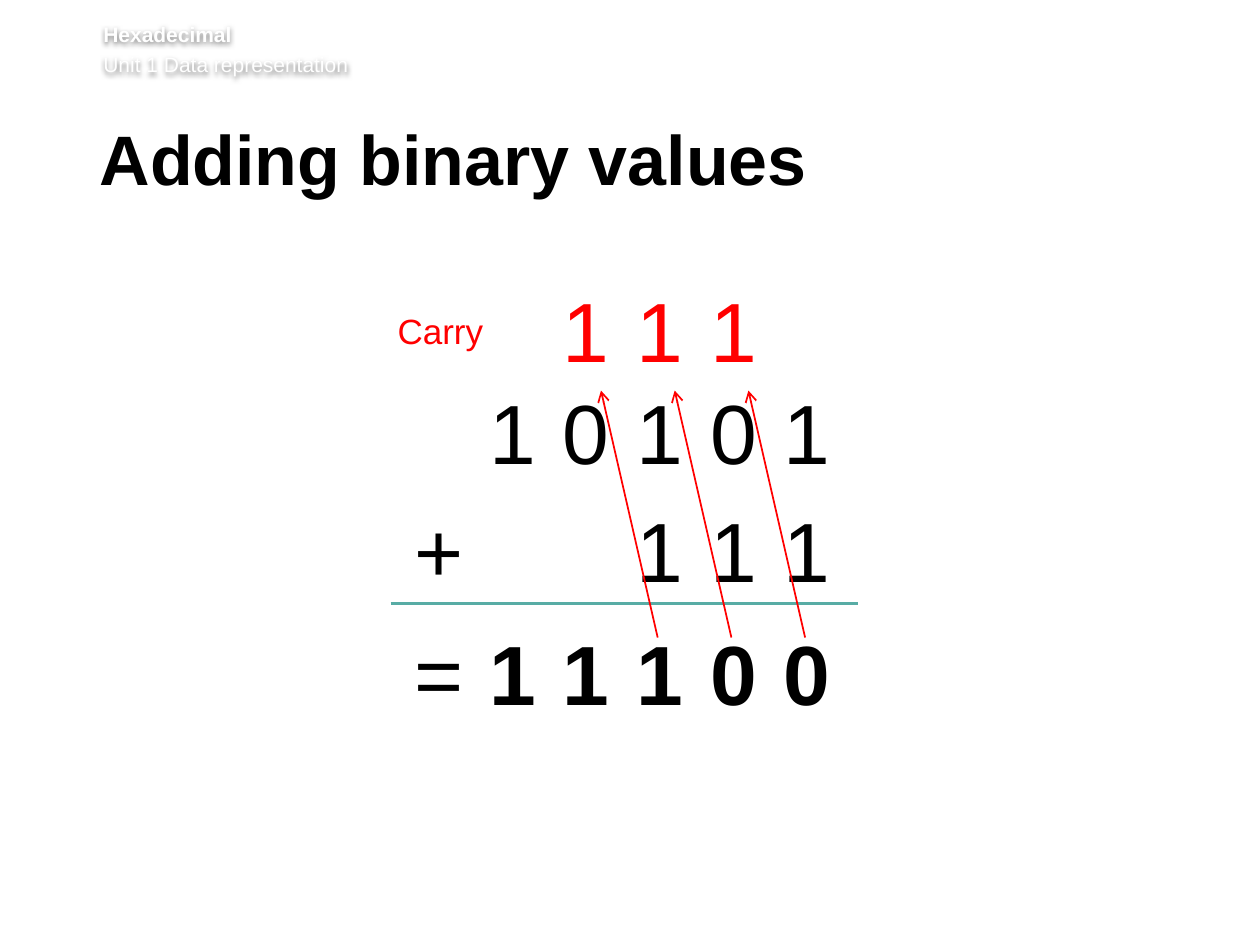
"""Build a slide that adds two binary values column by column."""
from lxml import etree
from pptx import Presentation
from pptx import util as u
from pptx.dml.color import RGBColor
from pptx.enum import shapes, text
from pptx.oxml import parse_xml
from pptx.oxml.ns import nsdecls, qn

BLACK = RGBColor(0x00, 0x00, 0x00)
WHITE = RGBColor(0xFF, 0xFF, 0xFF)
RED = RGBColor(0xFF, 0x00, 0x00)
TEAL = RGBColor(0x58, 0xAC, 0xA5)

HEADER = [("Hexadecimal", True), ("Unit 1 Data representation", False)]
TITLE = "Adding binary values"
CARRY_LABEL = "Carry"
ROWS = [
    {"top": 2.16, "cells": "  111 ", "color": RED},
    {"top": 2.97, "cells": " 10101", "color": BLACK},
    {"top": 3.91, "cells": "+  111", "color": BLACK},
    {"top": 4.88, "cells": "=11100", "color": BLACK, "bold_digits": True},
]
CARRYING_COLUMNS = [3, 4, 5]
GRID_LEFT, COLUMN, ROW = 3.19, 0.585, 0.91
RULE_LEFT, RULE_RIGHT, RULE_TOP = 3.1, 6.81, 4.79
ARROW_BOTTOM, ARROW_TOP, ARROW_LEAN = 5.06, 3.1, 0.45


def place(box, left, top, width, height):
    box.left, box.top = u.Inches(left), u.Inches(top)
    box.width, box.height = u.Inches(width), u.Inches(height)


def set_insets(frame, left, top, right, bottom):
    frame.margin_left, frame.margin_top = u.Inches(left), u.Inches(top)
    frame.margin_right, frame.margin_bottom = u.Inches(right), u.Inches(bottom)


def write(para, words, size=48, color=BLACK, bold=False, align=text.PP_ALIGN.LEFT):
    para.alignment = align
    span = para.add_run()
    span.text = words
    span.font.name, span.font.size = "Arial", u.Pt(size)
    span.font.bold, span.font.color.rgb = bold, color


def add_label(page, words, left, top, width, height, **style):
    box = page.shapes.add_textbox(*map(u.Inches, (left, top, width, height)))
    box.text_frame.word_wrap = False
    write(box.text_frame.paragraphs[0], words, align=text.PP_ALIGN.CENTER, **style)


def add_line(page, start, end, color, width, arrow=False):
    line = page.shapes.add_connector(
        shapes.MSO_CONNECTOR.STRAIGHT, *map(u.Inches, start + end))
    line.line.color.rgb, line.line.width = color, u.Pt(width)
    if arrow:
        etree.SubElement(line.line._get_or_add_ln(), qn("a:tailEnd"), type="arrow")
    etree.SubElement(line._element.spPr, qn("a:effectLst"))


def add_header(page):
    box = page.shapes.add_textbox(*map(u.Inches, (0.82, 0.17, 8.82, 0.49)))
    frame = box.text_frame
    frame.word_wrap = True
    set_insets(frame, 0, 0, 0, 0.05)
    for index, (words, bold) in enumerate(HEADER):
        para = frame.add_paragraph() if index else frame.paragraphs[0]
        if index:
            para.space_before = u.Pt(2.9)
        write(para, words, size=12, color=WHITE, bold=bold)
    box._element.spPr.append(parse_xml(
        f'<a:effectLst {nsdecls("a")}>'
        '<a:outerShdw blurRad="38100" dist="12700" dir="5400000" algn="ctr">'
        '<a:srgbClr val="000000"><a:alpha val="50000"/></a:srgbClr>'
        '</a:outerShdw></a:effectLst>'))


def add_title(page):
    box = page.shapes.title
    place(box, 0.79, 0.99, 8.55, 0.73)
    frame = box.text_frame
    frame.word_wrap, frame.auto_size = True, text.MSO_AUTO_SIZE.NONE
    frame.vertical_anchor = text.MSO_ANCHOR.TOP
    set_insets(frame, 0, 0.05, 0.1, 0.05)
    para = frame.paragraphs[0]
    para.line_spacing = u.Pt(39)
    write(para, TITLE, size=40, bold=True)


def add_sum(page):
    for row in ROWS:
        for column, mark in enumerate(row["cells"]):
            if mark != " ":
                bold = mark.isdigit() and row.get("bold_digits", False)
                add_label(page, mark, GRID_LEFT + column * COLUMN, row["top"],
                          COLUMN, ROW, color=row["color"], bold=bold)
    add_label(page, CARRY_LABEL, 3.05, 2.41, 0.89, 0.44, size=20, color=RED)
    add_line(page, (RULE_LEFT, RULE_TOP), (RULE_RIGHT, RULE_TOP), TEAL, 2.25)
    for column in CARRYING_COLUMNS:
        foot = GRID_LEFT + (column + 0.47) * COLUMN
        add_line(page, (foot, ARROW_BOTTOM), (foot - ARROW_LEAN, ARROW_TOP),
                 RED, 1, arrow=True)


def main():
    deck = Presentation()
    deck.slide_width, deck.slide_height = u.Inches(10), u.Inches(7.5)
    page = deck.slides.add_slide(deck.slide_layouts[5])
    add_header(page)
    add_title(page)
    add_sum(page)
    deck.save("out.pptx")


if __name__ == "__main__":
    main()
